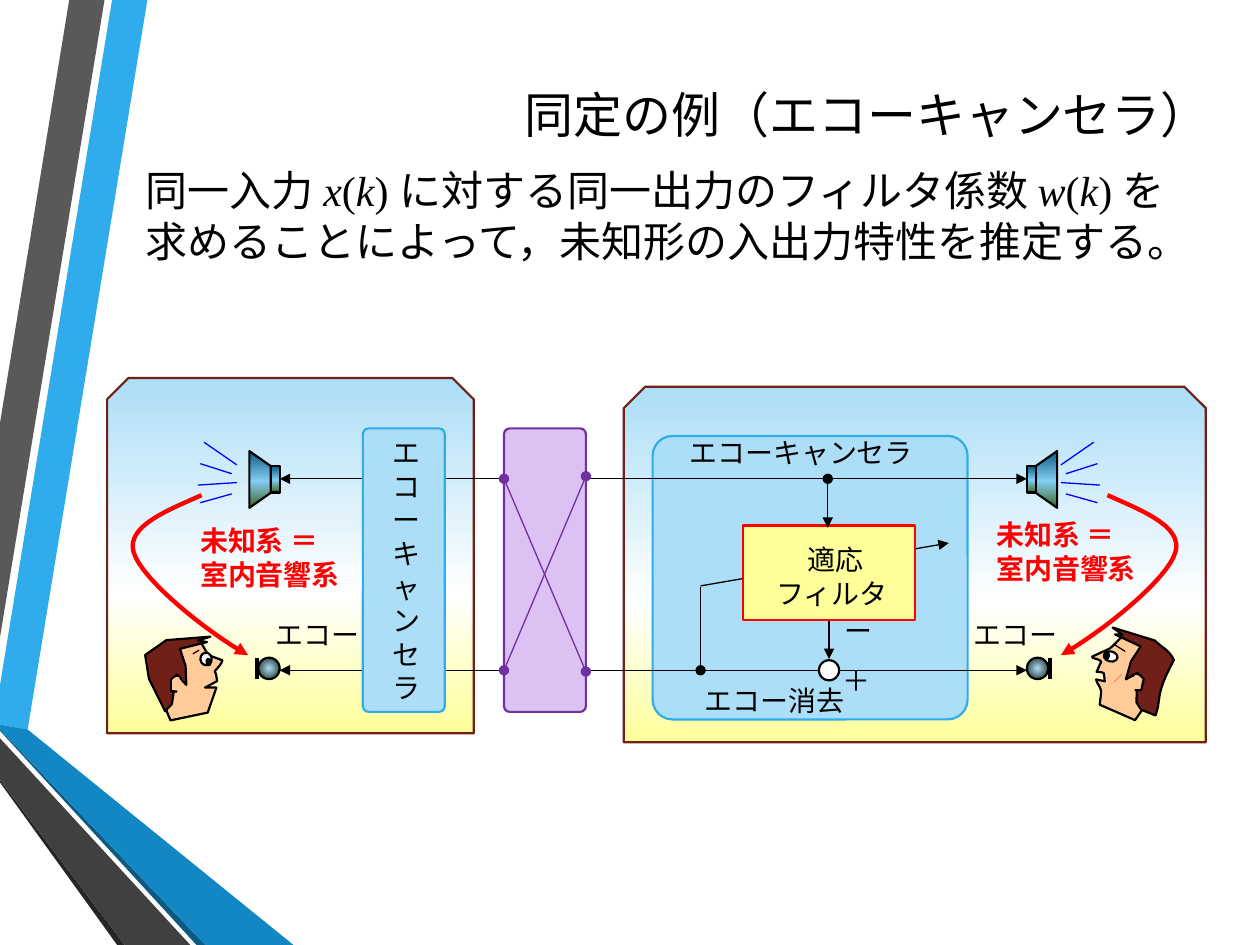
from dataclasses import dataclass

from lxml import etree
from pptx import Presentation
from pptx import util as u
from pptx.dml import color
from pptx.enum import dml, shapes, text
from pptx.oxml import ns

PX = 9144  # EMU in one px: 100 px to the inch
KIND = shapes.MSO_SHAPE


@dataclass(frozen=True)
class Theme:
    black: str = "000000"
    white: str = "FFFFFF"
    red: str = "FF0000"
    ray: str = "0000FF"
    sky: str = "ACDEF7"
    blue: str = "30ACEC"
    mid_blue: str = "1287C3"
    deep_blue: str = "0C5A82"
    grey: str = "595959"
    dark_grey: str = "404040"
    charcoal: str = "262626"
    brown: str = "712018"
    skin: str = "FFCC99"
    yellow: str = "FFFF99"
    lilac: str = "DBC2F3"
    purple: str = "7030A0"
    room: tuple = ((0, "ACDEF7"), (61, "FFFFFF"), (100, "FFFF99"))
    metal: tuple = ((0, "0C5A82"), (53, "83CDF4"), (100, "3F6623"))
    ball: tuple = ((0, "ACDEF7"), (100, "101909"))
    title_font: str = "Calibri"
    body_font: str = "Times New Roman"
    title_size: int = 28
    body_size: int = 24
    label_size: int = 16
    thin: float = 0.75
    outline: float = 1.25
    thick: float = 2.25
    arc: float = 2.5


def apply(target, values):
    for name, value in values.items():
        setattr(target, name, value)


def trace(path):
    """Points of a path: pairs are corners, sixes are Bezier curves."""
    points = [path[0]]
    for step in path[1:]:
        if len(step) == 2:
            points.append(step)
            continue
        ends = (points[-1], step[:2], step[2:4], step[4:])
        for i in range(1, 17):
            t = i / 16
            weights = ((1 - t) ** 3, 3 * t * (1 - t) ** 2, 3 * t * t * (1 - t), t ** 3)
            points.append(tuple(sum(w * e[axis] for w, e in zip(weights, ends))
                                for axis in (0, 1)))
    return [(round(x * PX), round(y * PX)) for x, y in points]


class Painter:
    def __init__(self, slide, theme):
        self.slide, self.theme = slide, theme

    def gradient(self, shape, stops, angle):
        """Linear gradient, or a radial one when angle is None."""
        shape.fill.gradient()
        grad = shape._element.spPr.find(ns.qn("a:gradFill"))
        for child in list(grad):
            grad.remove(child)
        stop_list = etree.SubElement(grad, ns.qn("a:gsLst"))
        for place, rgb in stops:
            stop = etree.SubElement(stop_list, ns.qn("a:gs"), pos=str(place * 1000))
            etree.SubElement(stop, ns.qn("a:srgbClr"), val=rgb)
        if angle is None:
            radial = etree.SubElement(grad, ns.qn("a:path"), path="circle")
            etree.SubElement(radial, ns.qn("a:fillToRect"), dict.fromkeys("ltrb", "50000"))
        else:
            etree.SubElement(grad, ns.qn("a:lin"), ang=str(angle * 60000), scaled="0")

    def stroke(self, shape, rgb, width, head=None, tail=None):
        shape.line.color.rgb = color.RGBColor.from_string(rgb)
        shape.line.width = u.Pt(width)
        ln = shape._element.spPr.find(ns.qn("a:ln"))
        for tag, end in (("a:headEnd", head), ("a:tailEnd", tail)):
            if end:
                etree.SubElement(ln, ns.qn(tag), type=end)

    def finish(self, shape, fill, line, width, angle=90, rotation=0, tail=None):
        shape.shadow.inherit = False
        shape.rotation = rotation
        if fill is None:
            shape.fill.background()
        elif isinstance(fill, tuple):
            self.gradient(shape, fill, angle)
        else:
            shape.fill.solid()
            shape.fill.fore_color.rgb = color.RGBColor.from_string(fill)
        if line:
            self.stroke(shape, line, width or self.theme.outline, tail=tail)
        else:
            shape.line.fill.background()
        return shape

    def shape(self, kind, box, fill, line=None, width=None, adjust=None, flips=(), **look):
        shape = self.slide.shapes.add_shape(kind, *(v * PX for v in box))
        for i, value in enumerate(adjust or ()):
            shape.adjustments[i] = value
        for flip in flips:
            shape._element.spPr.find(ns.qn("a:xfrm")).set(flip, "1")
        return self.finish(shape, fill, line, width, **look)

    def outline(self, path, fill, line=None, width=None, closed=True, **look):
        points = trace(path)
        builder = self.slide.shapes.build_freeform(*points[0], scale=1.0)
        builder.add_line_segments(points[1:], close=closed)
        return self.finish(builder.convert_to_shape(), fill, line, width, **look)

    def line(self, start, end, rgb=None, width=None, head=None, tail=None):
        wire = self.slide.shapes.add_connector(
            shapes.MSO_CONNECTOR.STRAIGHT, *(v * PX for v in (*start, *end)))
        self.stroke(wire, rgb or self.theme.black, width or self.theme.thin, head, tail)
        etree.SubElement(wire._element.spPr, ns.qn("a:effectLst"))

    def text(self, box, lines, align="LEFT", frame=None, vert=None, **font):
        """Each line is a string or a list of (string, italic) runs."""
        words = self.slide.shapes.add_textbox(*(v * PX for v in box)).text_frame
        apply(words, {"word_wrap": True,
                      "auto_size": text.MSO_AUTO_SIZE.SHAPE_TO_FIT_TEXT, **(frame or {})})
        if vert:
            words._txBody.bodyPr.set("vert", vert)
        look = {"name": self.theme.body_font, "size": self.theme.label_size, **font}
        rgb = look.pop("rgb", self.theme.black)
        look["size"] = u.Pt(look["size"])
        for i, content in enumerate(lines):
            para = words.paragraphs[0] if i == 0 else words.add_paragraph()
            para.alignment = getattr(text.PP_ALIGN, align)
            for part, italic in [(content, False)] if isinstance(content, str) else content:
                run = para.add_run()
                run.text = part
                apply(run.font, {**look, "italic": italic})
                run.font.color.rgb = color.RGBColor.from_string(rgb)


def main():
    deck = Presentation()
    apply(deck, {"slide_width": 1000 * PX, "slide_height": 750 * PX})
    t = Theme()
    p = Painter(deck.slides.add_slide(deck.slide_layouts[6]), t)

    # Ribbons at the left edge
    for ribbon, rgb in (
        ([(0, 544), (0, 575), (22, 579), (117, 0), (89, 0)], t.blue),
        ([(83, 0), (55, 0), (0, 336), (0, 506)], t.grey),
        ([(0, 619), (0, 621), (93, 750), (99, 750)], t.charcoal),
        ([(0, 579), (0, 580), (156, 750), (163, 750)], t.deep_blue),
        ([(0, 579), (163, 750), (233, 750), (22, 579), (0, 575)], t.mid_blue),
        ([(0, 619), (99, 750), (151, 750), (0, 586)], t.dark_grey),
    ):
        p.outline(ribbon, rgb)

    # Title and explanation
    p.text((127, 18, 843, 145), ["同定の例（エコーキャンセラ）"], "RIGHT",
           {"vertical_anchor": text.MSO_ANCHOR.MIDDLE, "auto_size": text.MSO_AUTO_SIZE.NONE},
           name=t.title_font, size=t.title_size)
    p.text((106, 126, 841, 91), [[
        ("同一入力 ", False), ("x", True), ("(", False), ("k", True),
        (") に対する同一出力のフィルタ係数 ", False), ("w", True), ("(", False), ("k", True),
        (") を求めることによって，未知形の入出力特性を推定する。", False)]], size=t.body_size)

    # Rooms and the right canceller
    for room in ((495, 307, 462, 282), (85, 300, 291, 282)):
        p.shape(KIND.SNIP_2_SAME_RECTANGLE, room, t.room, t.brown, adjust=(0.06, 0))
    p.shape(KIND.ROUNDED_RECTANGLE, (518, 346, 250, 225), t.sky, t.blue, adjust=(0.07,))

    # Microphones and speakers
    for mic, bar, cone, back, turn, cone_flips, back_flips in (
        (815, 833, 808, 808, 90, ["flipV"], []),
        (205, 204, 184, 208, 270, ["flipH", "flipV"], ["flipH"]),
    ):
        p.shape(KIND.OVAL, (mic, 522, 17, 17), t.ball, t.black, angle=None)
        p.line((bar, 522), (bar, 539), width=t.thick)
        p.shape(KIND.TRAPEZOID, (cone, 372, 45, 17), t.metal, t.black, adjust=(0.7,),
                flips=cone_flips, angle=0, rotation=turn)
        p.shape(KIND.RECTANGLE, (back, 377, 21, 7), t.metal, t.black,
                flips=back_flips, angle=0, rotation=turn)

    # Signal lines and adaptive filter
    for y in (380, 532):
        p.line((222, y), (815, y), head="triangle", tail="triangle")
    p.line((556, 465), (753, 431), tail="triangle")
    p.line((658, 492), (658, 523), tail="triangle")
    p.line((556, 466), (556, 532), tail="oval")
    p.shape(KIND.RECTANGLE, (590, 417, 136, 75), t.yellow, t.red)
    p.line((657, 380), (657, 419), head="oval", tail="triangle")
    p.shape(KIND.OVAL, (650, 524, 16, 16), t.white, t.black)

    # Left canceller and the network between the rooms
    for x, fill, edge in ((288, t.sky, t.blue), (400, t.lilac, t.purple)):
        p.shape(KIND.ROUNDED_RECTANGLE, (x, 340, 65, 225), fill, edge, adjust=(0.07,))
    p.line((400, 532), (465, 378), t.purple, head="oval", tail="oval")
    p.line((465, 533), (400, 380), t.purple, head="oval", tail="oval")

    # Talkers: face, eye, pupil, hair, ear, brow
    for turn, face, eye, pupil, hair, ear, brow in (
        (353.9,
         [(134, 514), (161, 508), (163, 511, 166, 520, 168, 522), (178, 527),
          (177, 530, 173, 533, 171, 535), (172, 537, 172, 540, 172, 543), (162, 547),
          (171, 548), (162, 567), (132, 570), (122, 537)],
         (159, 518, 9, 10), (164, 523, 3, 5),
         [(135, 507), (170, 508), (160, 510), (167, 512), (145, 515), (148, 529), (147, 544),
          (140, 535), (134, 558), (128, 563), (118, 536), (117, 517)],
         [(144, 540), (144, 535, 139, 536, 136, 539), (135, 548), (140, 549)],
         ((158, 516), (153, 519))),
        (12.2,
         [(912, 513), (885, 505), (883, 507, 879, 515, 876, 518), (864, 527),
          (865, 529, 871, 527, 872, 530), (871, 532, 871, 535, 870, 538),
          (872, 538, 874, 537, 876, 538), (878, 544), (871, 544),
          (872, 547, 876, 549, 877, 553), (878, 563), (908, 569), (921, 538)],
         (876, 517, 11, 8), (877, 518, 3, 5),
         [(911, 506), (876, 503), (885, 507), (879, 508), (901, 513), (896, 526), (895, 541),
          (903, 534), (907, 557), (912, 562), (924, 564), (926, 549, 920, 549, 929, 518),
          (924, 511, 917, 510, 911, 506)],
         [(898, 538), (899, 533, 904, 535, 907, 538), (907, 547), (902, 548)],
         ((885, 512), (893, 517))),
    ):
        p.outline(face, t.skin, t.black, rotation=turn)
        p.shape(KIND.OVAL, eye, t.white, t.black, rotation=turn)
        p.shape(KIND.OVAL, pupil, t.black, t.black, rotation=turn)
        p.outline(hair, t.brown, t.black, rotation=turn)
        p.outline(ear, t.skin, t.black, closed=False, rotation=turn)
        p.line(*brow)
    cheek = p.shape(KIND.OVAL, (883, 533, 8, 10), t.skin, rotation=12.2).fill
    cheek.patterned()
    cheek.pattern = dml.MSO_PATTERN.PERCENT_10
    cheek.fore_color.rgb = color.RGBColor.from_string(t.red)
    cheek.back_color.rgb = color.RGBColor.from_string(t.skin)

    # Sound rays and echo paths, mirrored for the left room
    rays = ((842, 369, 868, 351), (846, 376, 871, 368), (846, 392, 871, 399), (842, 383, 873, 385))
    echo = [(879, 393), (903, 404, 939, 417, 933, 438), (927, 460, 873, 503, 842, 520)]
    for mirrored in (False, True):
        def place(values, total):
            return tuple(total - v if mirrored and i % 2 == 0 else v
                         for i, v in enumerate(values))
        for ray in rays:
            ends = place(ray, 1030)
            p.line(ends[:2], ends[2:], t.ray)
        p.outline([place(step, 1039) for step in echo], None, t.red, t.arc,
                  closed=False, tail="triangle")

    # Labels
    for box, lines, align in (
        ((660, 482, 61, 37), ["ー"], "LEFT"),
        ((659, 522, 61, 37), ["＋"], "LEFT"),
        ((604, 426, 113, 64), [" 適応", "フィルタ"], "CENTER"),
        ((536, 538, 153, 37), [" エコー消去"], "CENTER"),
        ((516, 341, 235, 37), [" エコーキャンセラ"], "CENTER"),
        ((727, 485, 153, 37), [" エコー"], "CENTER"),
        ((173, 485, 153, 37), [" エコー"], "CENTER"),
    ):
        p.text(box, lines, align)
    p.text((298, 341, 49, 225), ["エコーキャンセラ"], "CENTER", vert="wordArtVertRtl")
    for x, y in ((781, 406), (149, 411)):
        p.text((x, y, 136, 64), ["未知系 ＝", "室内音響系"], rgb=t.red, bold=True)

    deck.save("out.pptx")


if __name__ == "__main__":
    main()
